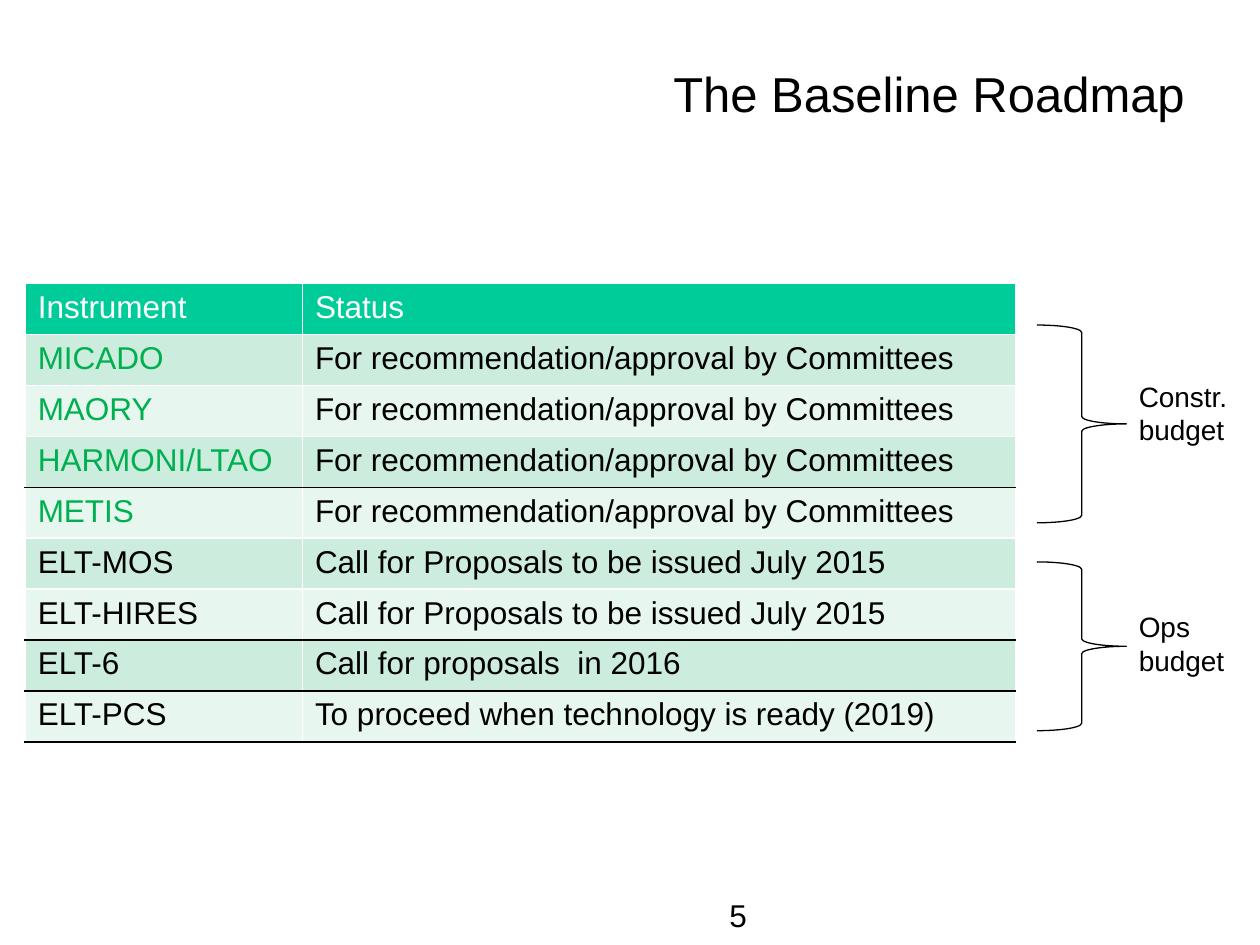
from lxml import etree
from pptx import Presentation
from pptx.dml.color import RGBColor
from pptx.enum.shapes import MSO_SHAPE
from pptx.enum.text import PP_ALIGN
from pptx.oxml.ns import qn
from pptx.util import Inches, Pt

BLACK, WHITE, GREEN = "000000", "FFFFFF", "00B050"
HEADER_FILL = "00CC99"
BAND_FILLS = ["CCECDE", "E7F6EF"]

APPROVAL = "For recommendation/approval by Committees"
PROPOSALS = "Call for Proposals to be issued July 2015"
ROADMAP = [
    ("Instrument", "Status"),
    ("MICADO", APPROVAL),
    ("MAORY", APPROVAL),
    ("HARMONI/LTAO", APPROVAL),
    ("METIS", APPROVAL),
    ("ELT-MOS", PROPOSALS),
    ("ELT-HIRES", PROPOSALS),
    ("ELT-6", "Call for proposals  in 2016"),
    ("ELT-PCS", "To proceed when technology is ready (2019)"),
]
CONSTRUCTION_ROWS = range(1, 5)
RULED_ROWS = {3, 6, 7, 8}  # rows with a black line below


def color(hex_string):
    return RGBColor.from_string(hex_string)


def write(text_frame, text, size, hex_color=BLACK):
    paragraph = text_frame.paragraphs[0]
    run = paragraph.add_run()
    run.text = text
    run.font.size = Pt(size)
    run.font.name = "Arial"
    run.font.bold = False
    run.font.color.rgb = color(hex_color)
    return paragraph


def add_text(slide, left, top, width, height, text, size):
    box = slide.shapes.add_textbox(
        Inches(left), Inches(top), Inches(width), Inches(height))
    box.text_frame.word_wrap = True
    return write(box.text_frame, text, size)


def set_borders(cell, top, bottom):
    """Draw 1 pt cell borders: white sides, given colours above and below."""
    properties = cell._tc.get_or_add_tcPr()
    edges = [("a:lnL", WHITE), ("a:lnR", WHITE), ("a:lnT", top), ("a:lnB", bottom)]
    for position, (tag, hex_color) in enumerate(edges):
        line = etree.Element(qn(tag), w=str(Pt(1)))
        fill = etree.SubElement(line, qn("a:solidFill"))
        etree.SubElement(fill, qn("a:srgbClr"), val=hex_color)
        properties.insert(position, line)


def add_title(slide, left, top, width, height):
    paragraph = add_text(slide, left, top, width, height, "The Baseline Roadmap", 28)
    paragraph.alignment = PP_ALIGN.RIGHT
    paragraph.line_spacing = 0.93


def add_roadmap_table(slide, left, top, width, height):
    table = slide.shapes.add_table(
        len(ROADMAP), 2, Inches(left), Inches(top), Inches(width), Inches(height)).table
    name_width = 2.2
    table.columns[0].width = Inches(name_width)
    table.columns[1].width = Inches(width - name_width)

    for row, texts in enumerate(ROADMAP):
        fill = BAND_FILLS[(row - 1) % 2] if row else HEADER_FILL
        top_line = BLACK if row - 1 in RULED_ROWS else WHITE
        bottom_line = BLACK if row in RULED_ROWS else WHITE
        for column, text in enumerate(texts):
            cell = table.cell(row, column)
            cell.fill.solid()
            cell.fill.fore_color.rgb = color(fill)
            set_borders(cell, top_line, bottom_line)
            if row == 0:
                text_color = WHITE
            elif column == 0 and row in CONSTRUCTION_ROWS:
                text_color = GREEN
            else:
                text_color = BLACK
            write(cell.text_frame, text, 18, text_color)


def add_budget_group(slide, left, top, height, label, label_top):
    """Place a brace with its budget label to the right of the point."""
    brace_width = 0.71
    brace = slide.shapes.add_shape(
        MSO_SHAPE.RIGHT_BRACE,
        Inches(left), Inches(top), Inches(brace_width), Inches(height))
    brace.shadow.inherit = False
    brace.fill.background()
    brace.line.color.rgb = color(BLACK)
    brace.line.width = Pt(0.75)
    add_text(slide, left + brace_width, label_top, 0.94, 0.64, label, 16)


def main():
    presentation = Presentation()
    presentation.slide_width = Inches(10)
    presentation.slide_height = Inches(7.5)
    slide = presentation.slides.add_slide(presentation.slide_layouts[6])

    add_title(slide, 1.14, 0.5, 8.36, 0.63)
    add_roadmap_table(slide, 0.2, 2.25, 7.86, 3.64)
    add_budget_group(slide, 8.23, 2.58, 1.57, "Constr. budget", 2.96)
    add_budget_group(slide, 8.23, 4.46, 1.34, "Ops budget", 4.79)
    add_text(slide, 5.69, 7.06, 0.69, 0.4, "5", 18)

    presentation.save("out.pptx")


if __name__ == "__main__":
    main()
